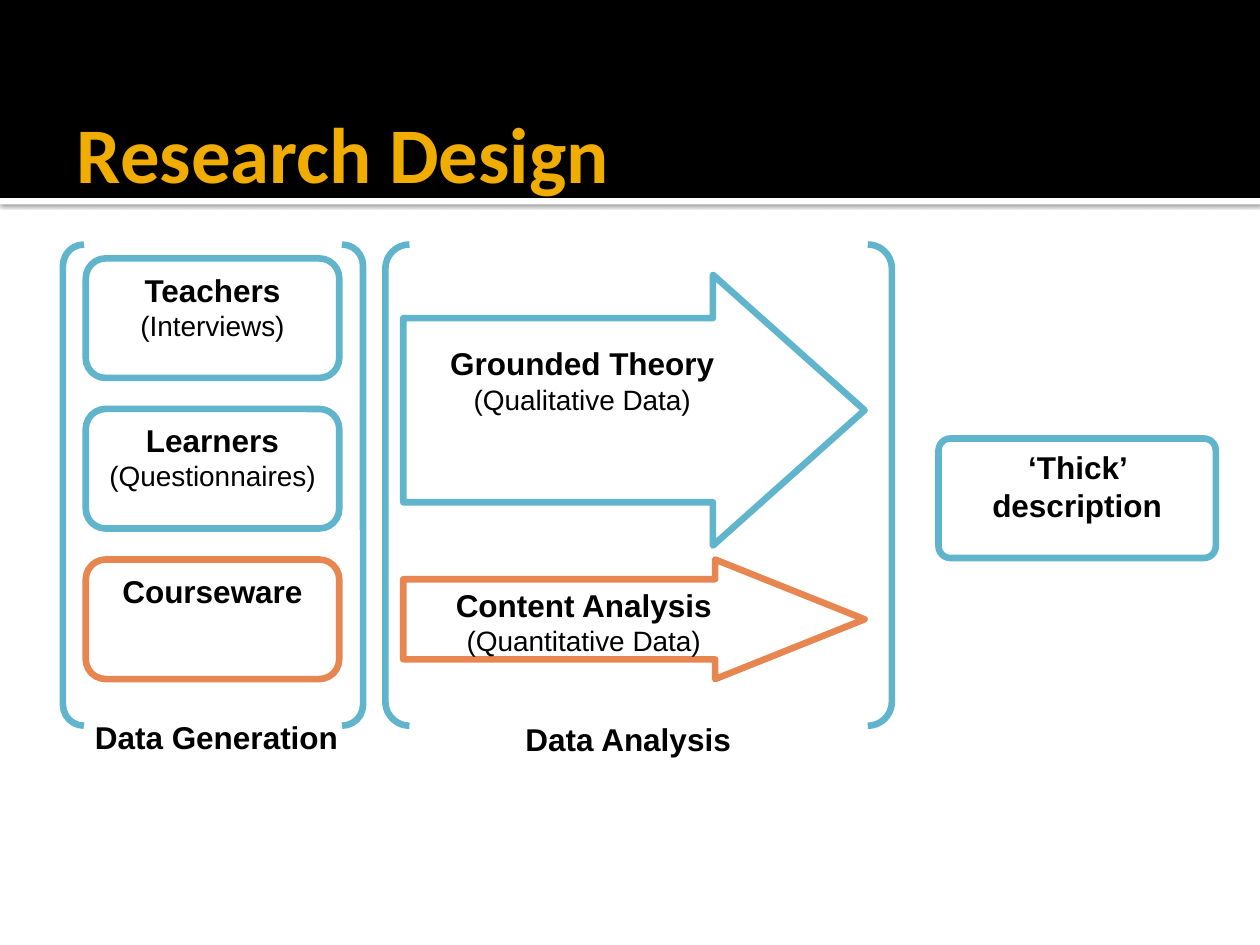
import pptx
import pptx.dml.color
import pptx.enum.shapes
import pptx.enum.text
import pptx.oxml
import pptx.oxml.ns
import pptx.util

Cm = pptx.util.Cm
Pt = pptx.util.Pt
SHAPE = pptx.enum.shapes.MSO_SHAPE

BLUE = "60B5CC"
ORANGE = "E88651"
WHITE = "FFFFFF"
BLACK = "000000"
GOLD = "F0AD00"

SLIDE_WIDTH = 25.4
HEADER_HEIGHT = 3.99
BOX_HEIGHT = 2.41
BOX_TOP = 5.21
BOX_PITCH = 3.035
COURSEWARE_TOP = BOX_TOP + 2 * BOX_PITCH


def color(hex_string):
    return pptx.dml.color.RGBColor.from_string(hex_string)


def add_shape(slide, kind, box, fill=None, line=None, adjustments=()):
    """Add a preset shape; box is left, top, width, height in centimetres."""
    shape = slide.shapes.add_shape(kind, *(Cm(length) for length in box))
    shape.shadow.inherit = False
    for index, value in enumerate(adjustments):
        shape.adjustments[index] = value
    if fill:
        shape.fill.solid()
        shape.fill.fore_color.rgb = color(fill)
    else:
        shape.fill.background()
    if line:
        shape.line.color.rgb = color(line)
        shape.line.width = Pt(3.78)
    else:
        shape.line.fill.background()
    return shape


def format_paragraph(paragraph, text, size, bold, font="Arial", hex_color=BLACK,
                     alignment=pptx.enum.text.PP_ALIGN.CENTER):
    paragraph.text = text
    paragraph.alignment = alignment
    paragraph.font.name = font
    paragraph.font.size = Pt(size)
    paragraph.font.bold = bold
    paragraph.font.color.rgb = color(hex_color)


def add_label(shape, heading, detail=None, top_inset=0.13):
    """Write a bold heading and an optional smaller line at the top of a shape."""
    frame = shape.text_frame
    frame.word_wrap = True
    frame.vertical_anchor = pptx.enum.text.MSO_ANCHOR.TOP
    frame.margin_top = Cm(top_inset)
    format_paragraph(frame.paragraphs[0], heading, 18, True)
    if detail:
        format_paragraph(frame.add_paragraph(), detail, 16, False)


def add_drop_shadow(shape):
    effects = shape._element.spPr.find(pptx.oxml.ns.qn("a:effectLst"))
    effects.append(pptx.oxml.parse_xml(
        f'<a:outerShdw {pptx.oxml.ns.nsdecls("a")} blurRad="{Pt(2.5)}" '
        f'dist="{Pt(0.8)}" dir="5400000" algn="t" rotWithShape="0">'
        f'<a:srgbClr val="{BLACK}"><a:alpha val="60000"/></a:srgbClr>'
        '</a:outerShdw>'))


def add_header(slide, text):
    stripe = add_shape(slide, SHAPE.RECTANGLE,
                       (0, HEADER_HEIGHT, SLIDE_WIDTH, 0.13), fill=WHITE)
    add_drop_shadow(stripe)
    add_shape(slide, SHAPE.RECTANGLE, (0, 0, SLIDE_WIDTH, HEADER_HEIGHT), fill=BLACK)

    title = slide.shapes.title
    title.left, title.top = Cm(1.3), Cm(1.32)
    title.width, title.height = Cm(22.86), Cm(3.48)
    frame = title.text_frame
    frame.auto_size = pptx.enum.text.MSO_AUTO_SIZE.NONE
    frame.vertical_anchor = pptx.enum.text.MSO_ANCHOR.MIDDLE
    frame.margin_left = Cm(0.25)
    frame.margin_right = Cm(0.13)
    format_paragraph(frame.paragraphs[0], text, 45, True, font="Calibri",
                     hex_color=GOLD, alignment=pptx.enum.text.PP_ALIGN.LEFT)
    # Bring the title in front of the black header.
    slide.shapes._spTree.append(title._element)


def add_sources(slide):
    sources = [
        ("Teachers", "(Interviews)", None, BLUE),
        ("Learners", "(Questionnaires)", None, BLUE),
        ("Courseware", None, WHITE, ORANGE),
    ]
    for row, (heading, detail, fill, line) in enumerate(sources):
        box = (1.73, BOX_TOP + row * BOX_PITCH, 5.11, BOX_HEIGHT)
        shape = add_shape(slide, SHAPE.FLOWCHART_ALTERNATE_PROCESS, box, fill, line)
        add_label(shape, heading, detail)


def add_stage(slide, left, width, curve, caption, caption_box):
    """Add a pair of brackets around one research stage, with its caption."""
    add_shape(slide, SHAPE.DOUBLE_BRACKET, (left, 4.93, width, 9.7),
              line=BLUE, adjustments=[curve])
    add_label(add_shape(slide, SHAPE.ROUNDED_RECTANGLE, caption_box), caption)


def add_analysis_arrow(slide, top, height, line, adjustments, heading, detail,
                       top_inset=0.13):
    arrow = add_shape(slide, SHAPE.RIGHT_ARROW, (8.13, top, 9.3, height),
                      WHITE, line, adjustments)
    add_label(arrow, heading, detail, top_inset)


def main():
    presentation = pptx.Presentation()
    presentation.slide_width = Cm(SLIDE_WIDTH)
    presentation.slide_height = Cm(19.05)
    slide = presentation.slides.add_slide(presentation.slide_layouts.get_by_name("Title Only"))
    slide.background.fill.solid()
    slide.background.fill.fore_color.rgb = color(WHITE)

    add_header(slide, "Research Design")
    add_sources(slide)
    add_stage(slide, 1.27, 6.05, 0.07, "Data Generation", (1.47, 14.25, 5.79, 1.83))
    add_analysis_arrow(slide, COURSEWARE_TOP, BOX_HEIGHT, ORANGE, [0.67, 1.25],
                       "Content Analysis", "(Quantitative Data)")
    add_stage(slide, 7.77, 10.21, 0.05, "Data Analysis", (10.11, 14.3, 5.11, 1.83))
    result = add_shape(slide, SHAPE.ROUNDED_RECTANGLE, (18.92, 8.84, 5.59, BOX_HEIGHT),
                       WHITE, BLUE, [0.1])
    add_label(result, "‘Thick’ description")
    add_analysis_arrow(slide, 5.54, 5.46, BLUE, [0.68, 0.56],
                       "Grounded Theory", "(Qualitative Data)", top_inset=0.53)

    presentation.save("out.pptx")


if __name__ == "__main__":
    main()
